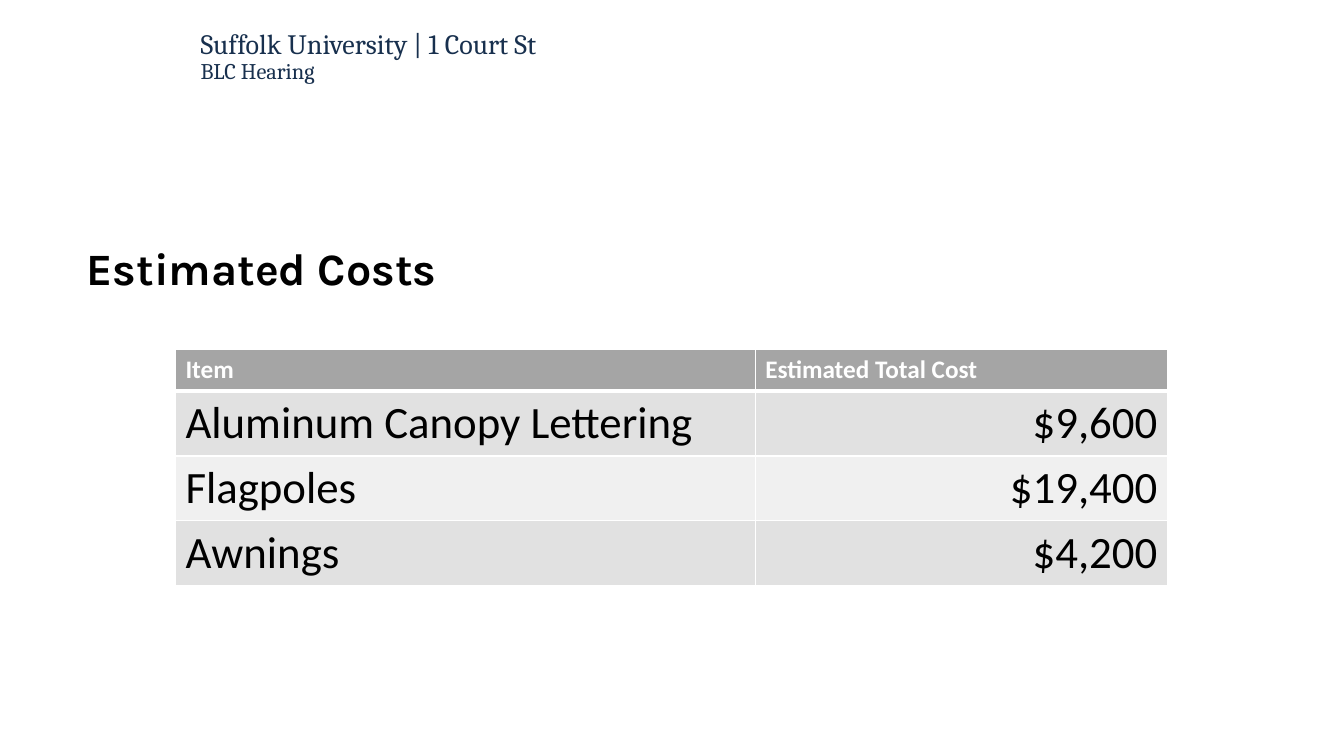
from dataclasses import dataclass

from lxml.etree import SubElement
from pptx import Presentation
from pptx.dml.color import RGBColor
from pptx.enum.text import MSO_ANCHOR, MSO_AUTO_SIZE, PP_ALIGN
from pptx.oxml.ns import qn
from pptx.util import Emu, Pt

PX = 9144  # one hundredth of an inch
WHITE, BLACK, NAVY = "FFFFFF", "000000", "18304E"
HEADER_FILL, BAND_FILLS = "A5A5A5", ("E1E1E1", "F0F0F0")
COLUMN_WIDTHS = (575, 409)
HEADER_HEIGHT, ROW_HEIGHT = 41, 64
THIN, THICK = 1, 3


@dataclass(frozen=True)
class Style:
    size: int
    font: str
    color: str
    bold: bool = False


@dataclass(frozen=True)
class TextBox:
    left: int
    top: int
    width: int
    height: int
    text: str
    styles: tuple[Style, ...]
    anchor: MSO_ANCHOR = MSO_ANCHOR.TOP
    auto_size: MSO_AUTO_SIZE = MSO_AUTO_SIZE.NONE
    line_spacing: float = 1.0


@dataclass(frozen=True)
class Cost:
    item: str
    total: str


TEXT_BOXES = (
    TextBox(189, 2, 432, 110, "Suffolk University | 1 Court St\vBLC Hearing",
            (Style(20, "Cambria", NAVY), Style(16, "Cambria", NAVY)),
            anchor=MSO_ANCHOR.MIDDLE, line_spacing=0.9),
    TextBox(76, 234, 381, 64, "Estimated Costs",
            (Style(32, "Karla", BLACK, bold=True),),
            auto_size=MSO_AUTO_SIZE.SHAPE_TO_FIT_TEXT),
)
COSTS = (
    Cost("Item", "Estimated Total Cost"),
    Cost("Aluminum Canopy Lettering", "$9,600"),
    Cost("Flagpoles", "$19,400"),
    Cost("Awnings", "$4,200"),
)
HEADER_STYLE = Style(18, "Calibri", WHITE, bold=True)
BODY_STYLE = Style(32, "Calibri", BLACK)


def px(length: int) -> Emu:
    return Emu(length * PX)


def rgb(color: str) -> RGBColor:
    return RGBColor.from_string(color)


def format_font(font, style: Style) -> None:
    font.size = Pt(style.size)
    font.name = style.font
    font.bold = style.bold
    font.color.rgb = rgb(style.color)


def add_text(page, item: TextBox) -> None:
    """Draw a text box, giving each run the style at its position."""
    box = page.shapes.add_textbox(
        px(item.left), px(item.top), px(item.width), px(item.height))
    frame = box.text_frame
    frame.text = item.text
    frame.word_wrap = True
    frame.auto_size = item.auto_size
    frame.vertical_anchor = item.anchor
    para = frame.paragraphs[0]
    para.line_spacing = item.line_spacing
    for span, style in zip(para.runs, item.styles):
        format_font(span.font, style)


def set_borders(cell, top: int, bottom: int) -> None:
    """Give a cell white borders; must run before its fill is set."""
    properties = cell._tc.get_or_add_tcPr()
    for side, width in (("L", THIN), ("R", THIN), ("T", top), ("B", bottom)):
        line = SubElement(properties, qn(f"a:ln{side}"), w=str(Pt(width)))
        fill = SubElement(line, qn("a:solidFill"))
        SubElement(fill, qn("a:srgbClr"), val=WHITE)


def format_cell(cell, text: str, row: int, column: int) -> None:
    is_header = row == 0
    cell.text = text
    para = cell.text_frame.paragraphs[0]
    is_amount = column == 1 and not is_header
    para.alignment = PP_ALIGN.RIGHT if is_amount else PP_ALIGN.LEFT
    format_font(para.runs[0].font, HEADER_STYLE if is_header else BODY_STYLE)
    set_borders(cell, THICK if row == 1 else THIN, THICK if is_header else THIN)
    cell.fill.solid()
    color = HEADER_FILL if is_header else BAND_FILLS[(row - 1) % 2]
    cell.fill.fore_color.rgb = rgb(color)


def add_cost_table(page, costs: tuple[Cost, ...]) -> None:
    height = HEADER_HEIGHT + ROW_HEIGHT * (len(costs) - 1)
    table = page.shapes.add_table(
        len(costs), len(COLUMN_WIDTHS), px(174), px(347),
        px(sum(COLUMN_WIDTHS)), px(height)).table
    for column, width in zip(table.columns, COLUMN_WIDTHS):
        column.width = px(width)
    for row, cost in enumerate(costs):
        table.rows[row].height = px(ROW_HEIGHT if row else HEADER_HEIGHT)
        for column, text in enumerate((cost.item, cost.total)):
            format_cell(table.cell(row, column), text, row, column)


def main() -> None:
    deck = Presentation()
    deck.slide_width, deck.slide_height = px(1333), px(750)
    page = deck.slides.add_slide(deck.slide_layouts[6])
    header, heading = TEXT_BOXES
    add_text(page, header)
    add_cost_table(page, COSTS)
    add_text(page, heading)
    deck.save("out.pptx")


if __name__ == "__main__":
    main()
